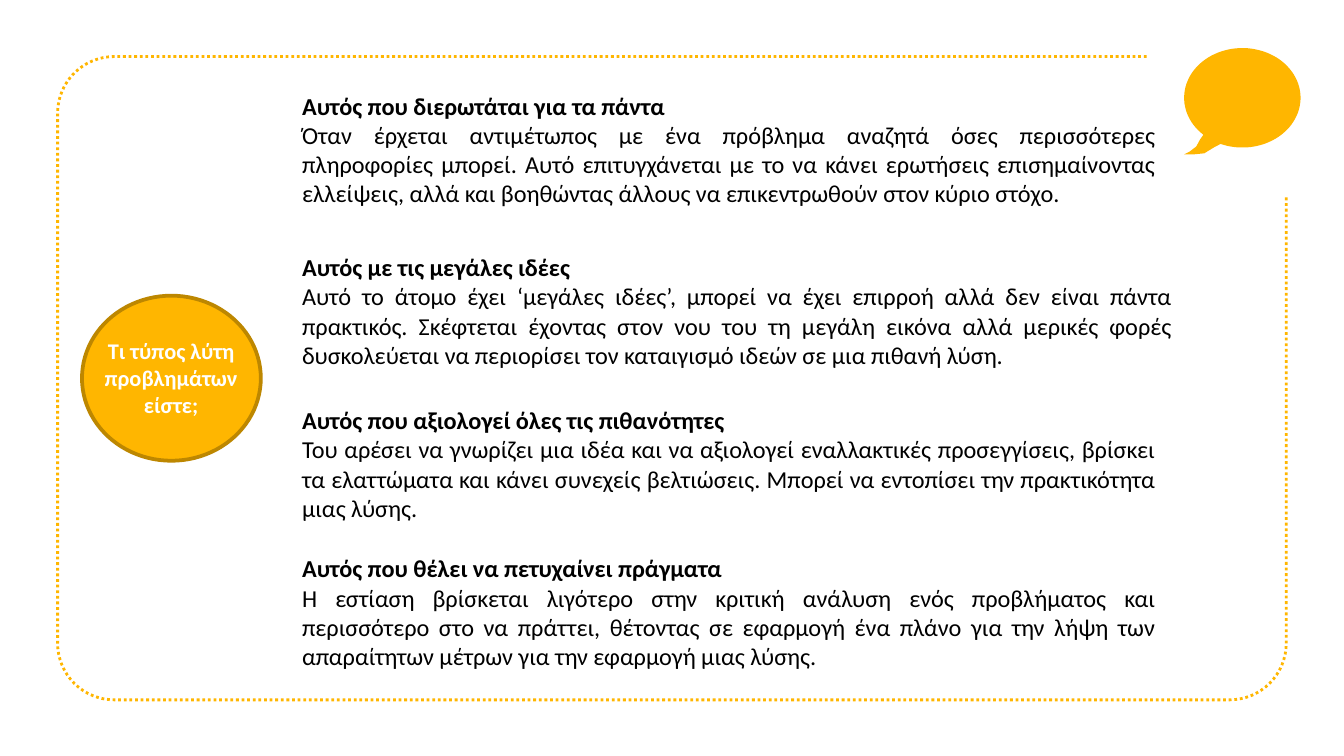
from math import cos, radians, sin

from pptx import Presentation
from pptx.dml.color import RGBColor
from pptx.enum.dml import MSO_LINE
from pptx.enum.shapes import MSO_SHAPE
from pptx.enum.text import MSO_AUTO_SIZE, PP_ALIGN
from pptx.util import Cm, Pt

YELLOW, BROWN, BLACK, WHITE = "FFB600", "BD8700", "000000", "FFFFFF"
FONT = "Calibri"

# Content: top and width in cm, heading, description
QUESTION = "Τι τύπος λύτη προβλημάτων είστε;"
SOLVERS = [
    (1.6, 16.61, "Αυτός που διερωτάται για τα πάντα",
     "Όταν έρχεται αντιμέτωπος με ένα πρόβλημα αναζητά όσες περισσότερες "
     "πληροφορίες μπορεί. Αυτό επιτυγχάνεται με το να κάνει ερωτήσεις "
     "επισημαίνοντας ελλείψεις, αλλά και βοηθώντας άλλους να "
     "επικεντρωθούν στον κύριο στόχο."),
    (4.65, 16.92, "Αυτός με τις μεγάλες ιδέες",
     "Αυτό το άτομο έχει ‘μεγάλες ιδέες’, μπορεί να έχει επιρροή αλλά δεν "
     "είναι πάντα πρακτικός. Σκέφτεται έχοντας στον νου του τη μεγάλη "
     "εικόνα αλλά μερικές φορές δυσκολεύεται να περιορίσει τον καταιγισμό "
     "ιδεών σε μια πιθανή λύση."),
    (7.54, 16.61, "Αυτός που αξιολογεί όλες τις πιθανότητες",
     "Του αρέσει να γνωρίζει μια ιδέα και να αξιολογεί εναλλακτικές "
     "προσεγγίσεις, βρίσκει τα ελαττώματα και κάνει συνεχείς βελτιώσεις. "
     "Μπορεί να εντοπίσει την πρακτικότητα μιας λύσης."),
    (10.34, 16.61, "Αυτός που θέλει να πετυχαίνει πράγματα",
     "Η εστίαση βρίσκεται λιγότερο στην κριτική ανάλυση ενός προβλήματος "
     "και περισσότερο στο να πράττει, θέτοντας σε εφαρμογή ένα πλάνο για "
     "την λήψη των απαραίτητων μέτρων για την εφαρμογή μιας λύσης."),
]
BUBBLE_TAIL = [(22.94, 2.79), (22.76, 2.9), (22.56, 2.92), (22.38, 2.92),
               (22.48, 2.87), (22.61, 2.77), (22.68, 2.64)]


def color(hex_code):
    return RGBColor.from_string(hex_code)


def arc(cx, cy, rx, ry, start, end, steps):
    angles = [radians(start + (end - start) * i / steps)
              for i in range(steps + 1)]
    return [(cx + rx * cos(a), cy + ry * sin(a)) for a in angles]


def style(shape, fill=None, line=None, width=1):
    shape.shadow.inherit = False
    if fill:
        shape.fill.solid()
        shape.fill.fore_color.rgb = color(fill)
    else:
        shape.fill.background()
    if line:
        shape.line.color.rgb = color(line)
        shape.line.width = Pt(width)
    else:
        shape.line.fill.background()


def add_outline(s, points, close):
    points = [(Cm(x), Cm(y)) for x, y in points]
    builder = s.shapes.build_freeform(*points[0])
    builder.add_line_segments(points[1:], close=close)
    return builder.convert_to_shape()


def add_text(s, box, paragraphs, size, hex_code, align):
    """Add a text box whose first paragraph is bold."""
    tf = s.shapes.add_textbox(*map(Cm, box)).text_frame
    tf.word_wrap = True
    tf.auto_size = MSO_AUTO_SIZE.SHAPE_TO_FIT_TEXT
    tf.text = "\n".join(paragraphs)
    for i, p in enumerate(tf.paragraphs):
        p.alignment = align
        font = p.runs[0].font
        font.name, font.size, font.bold = FONT, Pt(size), i == 0
        font.color.rgb = color(hex_code)


prs = Presentation()
prs.slide_width, prs.slide_height = Cm(25.4), Cm(14.29)
s = prs.slides.add_slide(prs.slide_layouts[6])

# Dotted frame, open at the top right corner
left, top, right, bottom, radius = 1.09, 1.07, 24.31, 13.23, 1.07
corners = [(left + radius, top + radius, 270),
           (left + radius, bottom - radius, 180),
           (right - radius, bottom - radius, 90)]
points = [(21.67, top)]
for cx, cy, start in corners:
    points += arc(cx, cy, radius, radius, start, start - 90, 16)
points.append((right, 3.71))
frame = add_outline(s, points, close=False)
style(frame, line=YELLOW, width=1.5)
frame.line.dash_style = MSO_LINE.ROUND_DOT

# Speech bubble
bubble = arc(23.48, 1.85, 1.1, 0.94, 132, 472, 90) + BUBBLE_TAIL
style(add_outline(s, bubble, close=True), fill=YELLOW)

# Question in a circle
circle = s.shapes.add_shape(MSO_SHAPE.OVAL, *map(Cm, (1.55, 5.59, 3.38, 3.12)))
style(circle, YELLOW, BROWN, 2)
add_text(s, (1.7, 6.25, 3.07, 1.8), [QUESTION], 12, WHITE, PP_ALIGN.CENTER)

# Types of problem solver
for y, width, heading, description in SOLVERS:
    add_text(s, (5.46, y, width, 2.49), [heading, description],
             13, BLACK, PP_ALIGN.JUSTIFY)

prs.save("out.pptx")
